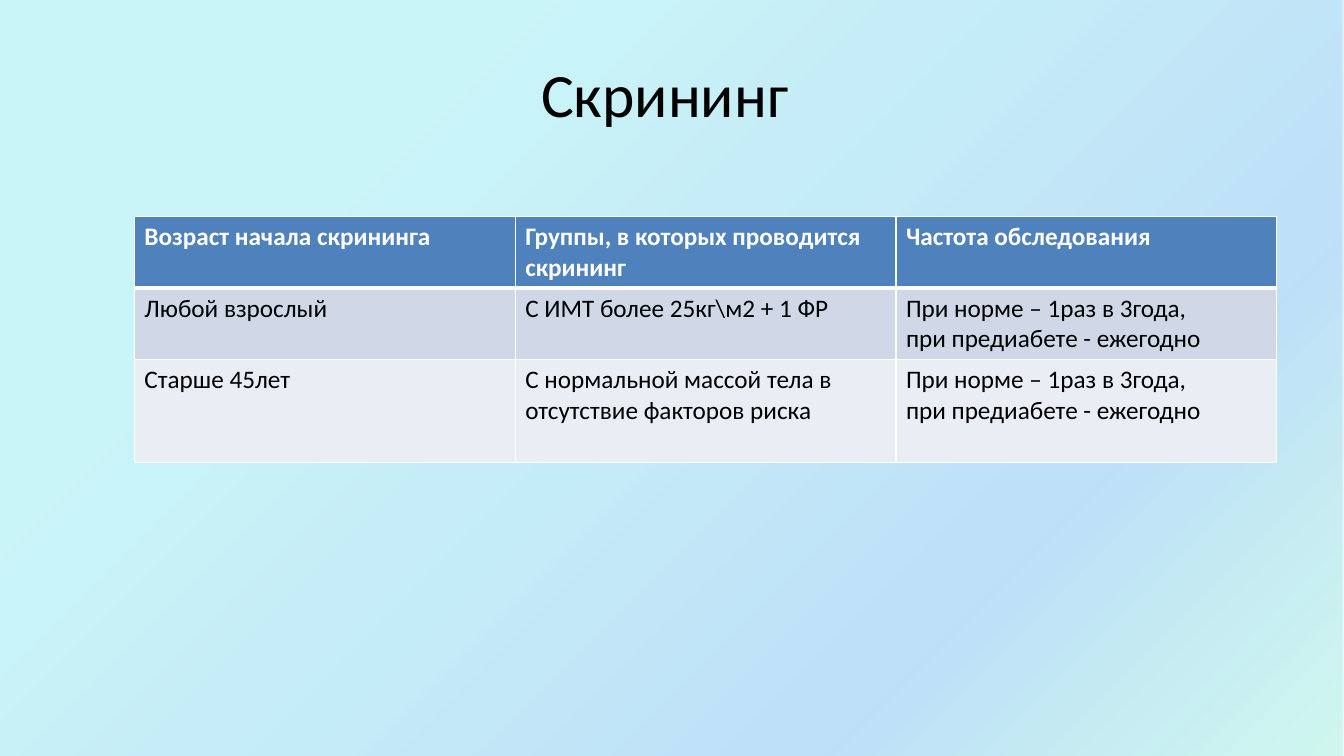
"""Build the screening slide: a title and a table over a soft gradient."""
from dataclasses import dataclass

import lxml.etree
import pptx
import pptx.dml.color
import pptx.enum.shapes
import pptx.enum.text
import pptx.oxml
import pptx.oxml.ns
import pptx.util

Pt = pptx.util.Pt
FONT = "Calibri"
COLORS = {
    "text": "000000",
    "white": "FFFFFF",
    "header": "4F81BD",
    "odd": "D0D8E8",
    "even": "E9EDF4",
    "cyan": "21D6E0",
    "blue": "0087E6",
    "green": "03D4A8",
    "navy": "005CBF",
}


@dataclass
class GradientStop:
    position: int
    color: str
    opacity: int


@dataclass
class TableRow:
    height: float
    fill: str
    color: str
    bold: bool
    top_line: float
    bottom_line: float
    texts: tuple[str, ...]


STOPS = (
    GradientStop(25, "cyan", 23),
    GradientStop(75, "blue", 25),
    GradientStop(100, "green", 18),
    GradientStop(100, "navy", 26),
)
FREQUENCY = "При норме – 1раз в 3года,\nпри предиабете - ежегодно"
ROWS = (
    TableRow(51, "header", "white", True, 1, 3, (
        "Возраст начала скрининга",
        "Группы, в которых проводится скрининг",
        "Частота обследования")),
    TableRow(51, "odd", "text", False, 3, 1, (
        "Любой взрослый", "С ИМТ более 25кг\\м2 + 1 ФР", FREQUENCY)),
    TableRow(73.5, "even", "text", False, 1, 1, (
        "Старше 45лет",
        "С нормальной массой тела в отсутствие факторов риска",
        FREQUENCY)),
)


def rgb(name: str) -> pptx.dml.color.RGBColor:
    return pptx.dml.color.RGBColor.from_string(COLORS[name])


def format_text(frame, size: float, color: str, bold: bool = False) -> None:
    for para in frame.paragraphs:
        for span in para.runs:
            span.font.name = FONT
            span.font.size = Pt(size)
            span.font.bold = bold
            span.font.color.rgb = rgb(color)


def add_backdrop(page) -> None:
    box = page.shapes.add_shape(
        pptx.enum.shapes.MSO_SHAPE.RECTANGLE, 0, 0, Pt(960), Pt(552))
    box.shadow.inherit = False
    box.line.fill.background()
    stops = "".join(
        f'<a:gs pos="{stop.position * 1000}"><a:srgbClr val="{COLORS[stop.color]}">'
        f'<a:alpha val="{stop.opacity * 1000}"/></a:srgbClr></a:gs>'
        for stop in STOPS)
    gradient = pptx.oxml.parse_xml(
        f'<a:gradFill {pptx.oxml.ns.nsdecls("a")} rotWithShape="1">'
        f'<a:gsLst>{stops}</a:gsLst><a:lin ang="2700000" scaled="1"/></a:gradFill>')
    geometry = box._element.spPr.find(pptx.oxml.ns.qn("a:prstGeom"))
    geometry.addnext(gradient)


def add_title(page, text: str) -> None:
    box = page.shapes.add_textbox(Pt(48), Pt(21.6), Pt(864), Pt(90))
    frame = box.text_frame
    frame.word_wrap = True
    frame.vertical_anchor = pptx.enum.text.MSO_ANCHOR.MIDDLE
    frame.text = text
    frame.paragraphs[0].alignment = pptx.enum.text.PP_ALIGN.CENTER
    format_text(frame, 44, "text")


def set_borders(cell, top: float, bottom: float) -> None:
    properties = cell._tc.get_or_add_tcPr()
    sides = {"lnL": 1, "lnR": 1, "lnT": top, "lnB": bottom}
    for index, (side, width) in enumerate(sides.items()):
        line = lxml.etree.Element(pptx.oxml.ns.qn(f"a:{side}"), w=str(Pt(width)))
        fill = lxml.etree.SubElement(line, pptx.oxml.ns.qn("a:solidFill"))
        lxml.etree.SubElement(
            fill, pptx.oxml.ns.qn("a:srgbClr"), val=COLORS["white"])
        properties.insert(index, line)


def add_screening_table(page) -> None:
    height = sum(row.height for row in ROWS)
    table = page.shapes.add_table(
        len(ROWS), len(ROWS[0].texts), Pt(96), Pt(154.8), Pt(816), Pt(height)).table
    for column in table.columns:
        column.width = Pt(272)
    for table_row, row in zip(table.rows, ROWS):
        table_row.height = Pt(row.height)
        for cell, text in zip(table_row.cells, row.texts):
            cell.fill.solid()
            cell.fill.fore_color.rgb = rgb(row.fill)
            cell.text_frame.text = text
            format_text(cell.text_frame, 18, row.color, row.bold)
            set_borders(cell, row.top_line, row.bottom_line)


def main() -> None:
    deck = pptx.Presentation()
    deck.slide_width, deck.slide_height = Pt(960), Pt(540)
    page = deck.slides.add_slide(deck.slide_layouts[6])
    add_backdrop(page)
    add_title(page, "Скрининг ")
    add_screening_table(page)
    deck.save("out.pptx")


if __name__ == "__main__":
    main()
